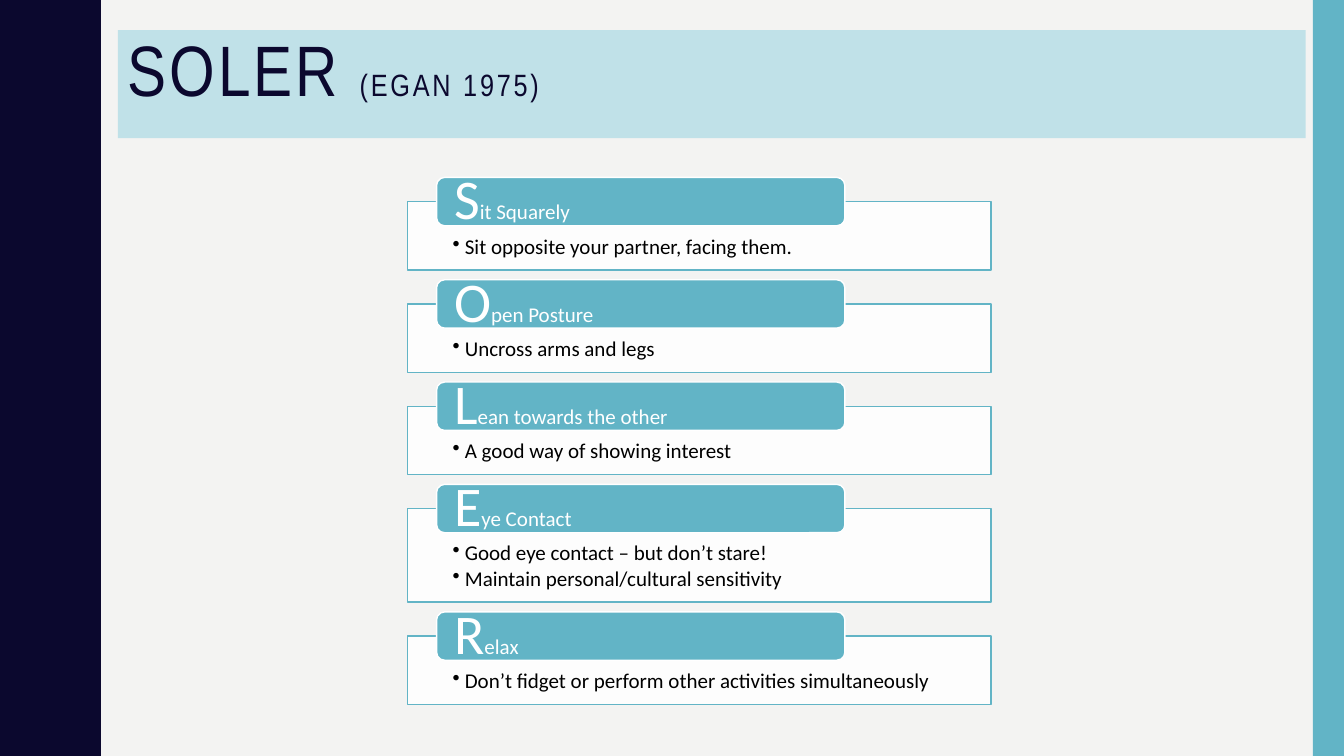
from pptx import Presentation
from pptx.dml.color import RGBColor
from pptx.enum import shapes, text
from pptx.oxml.ns import qn
from pptx.util import Inches, Pt
from lxml import etree

# Content
TITLE = [("SOLER ", 51), ("(EGAN 1975)", 22)]
# Initial, rest of heading, bullets, box height
STEPS = [
    ("S", "it Squarely", ["Sit opposite your partner, facing them."], 0.68),
    ("O", "pen Posture", ["Uncross arms and legs"], 0.68),
    ("L", "ean towards the other", ["A good way of showing interest"], 0.68),
    ("E", "ye Contact", ["Good eye contact – but don’t stare!",
                         "Maintain personal/cultural sensitivity"], 0.93),
    ("R", "elax", ["Don’t fidget or perform other activities simultaneously"], 0.68),
]

# Colours and fonts
NAVY = RGBColor(0x0B, 0x08, 0x2E)
TEAL = RGBColor(0x62, 0xB4, 0xC6)
PALE = RGBColor(0xC0, 0xE1, 0xE8)
PAPER = RGBColor(0xF3, 0xF3, 0xF2)
WHITE = RGBColor(0xFF, 0xFF, 0xFF)
BLACK = RGBColor(0, 0, 0)
HEAD_FONT, BODY_FONT = "Arial Narrow", "Calibri"

# Layout in inches
WIDTH, HEIGHT = 13.33, 7.5
LIST_TOP, LIST_BOTTOM = 2.0, 6.99
BOX_LEFT, BOX_W = 4.04, 5.79
TAB_LEFT, TAB_W, TAB_H, TAB_RISE = 4.33, 4.05, 0.48, 0.24
WAVE = 1.5
# Right edge of the wave at each depth, over half a wave
HALF_WAVE = [(0.78, 0), (0.78, 0.07), (0.79, 0.14), (0.8, 0.2), (0.81, 0.25),
             (0.83, 0.29), (0.85, 0.33), (0.87, 0.38), (0.89, 0.42), (0.91, 0.46),
             (0.93, 0.5), (0.95, 0.55), (0.96, 0.61), (0.97, 0.68), (0.97, 0.75)]


def paint(sp, fill, line=None):
    sp.shadow.inherit = False
    sp.fill.solid()
    sp.fill.fore_color.rgb = fill
    if line is None:
        sp.line.fill.background()
    else:
        sp.line.color.rgb = line
        sp.line.width = Pt(1)


def add_box(s, kind, at, fill, line=None):
    sp = s.shapes.add_shape(kind, *map(Inches, at))
    paint(sp, fill, line)
    return sp


def set_frame(sp, anchor, insets):
    tf = sp.text_frame
    tf.word_wrap = True
    tf.vertical_anchor = anchor
    tf.margin_left, tf.margin_top, tf.margin_right, tf.margin_bottom = map(Inches, insets)
    return tf


def set_paragraph(p, runs, font, color):
    p.alignment = text.PP_ALIGN.LEFT
    p.line_spacing = 0.9
    for words, size in runs:
        r = p.add_run()
        r.text = words
        r.font.name = font
        r.font.size = Pt(size)
        r.font.color.rgb = color


def add_bullet(p):
    pPr = p._p.get_or_add_pPr()
    pPr.set("marL", str(Inches(0.12)))
    pPr.set("indent", str(Inches(-0.12)))
    etree.SubElement(pPr, qn("a:buChar")).set("char", "•")


prs = Presentation()
prs.slide_width, prs.slide_height = Inches(WIDTH), Inches(HEIGHT)
s = prs.slides.add_slide(prs.slide_layouts[6])
s.background.fill.solid()
s.background.fill.fore_color.rgb = PAPER

# Wavy left band
wave = HALF_WAVE + [(x, WAVE - y) for x, y in HALF_WAVE[-2::-1]]
edge = [(x, y + i * WAVE) for i in range(round(HEIGHT / WAVE)) for x, y in wave]
builder = s.shapes.build_freeform(0, 0, scale=Inches(1))
builder.add_line_segments(edge + [(0, HEIGHT)], close=True)
paint(builder.convert_to_shape(), NAVY)

# Right band
RECT, ROUND = shapes.MSO_SHAPE.RECTANGLE, shapes.MSO_SHAPE.ROUNDED_RECTANGLE
add_box(s, RECT, (13.02, 0, 0.31, HEIGHT), TEAL)

# Title banner
banner = add_box(s, RECT, (1.17, 0.3, 11.78, 1.07), PALE)
tf = set_frame(banner, text.MSO_ANCHOR.TOP, (0.1, 0.05, 0.1, 0.05))
set_paragraph(tf.paragraphs[0], TITLE, HEAD_FONT, NAVY)
for r in tf.paragraphs[0].runs:
    r.font._element.set("spc", "200")

# Five steps, evenly spaced
gap = (LIST_BOTTOM - LIST_TOP - sum(step[3] for step in STEPS)) / (len(STEPS) - 1)
top = LIST_TOP
for initial, rest, bullets, height in STEPS:
    box = add_box(s, RECT, (BOX_LEFT, top, BOX_W, height), WHITE, TEAL)
    fill_color = box._element.spPr.find(qn("a:solidFill"))[0]
    etree.SubElement(fill_color, qn("a:alpha")).set("val", "90000")
    tf = set_frame(box, text.MSO_ANCHOR.TOP, (0.45, 0.34, 0.45, 0.12))
    for i, bullet in enumerate(bullets):
        p = tf.add_paragraph() if i else tf.paragraphs[0]
        set_paragraph(p, [(bullet, 15)], BODY_FONT, BLACK)
        p.space_after = Pt(2)
        add_bullet(p)

    tab = add_box(s, ROUND, (TAB_LEFT, top - TAB_RISE, TAB_W, TAB_H), TEAL, WHITE)
    tf = set_frame(tab, text.MSO_ANCHOR.MIDDLE, (0.15, 0, 0.15, 0))
    set_paragraph(tf.paragraphs[0], [(initial, 40), (rest, 15)], BODY_FONT, WHITE)
    top += height + gap

prs.save("out.pptx")
